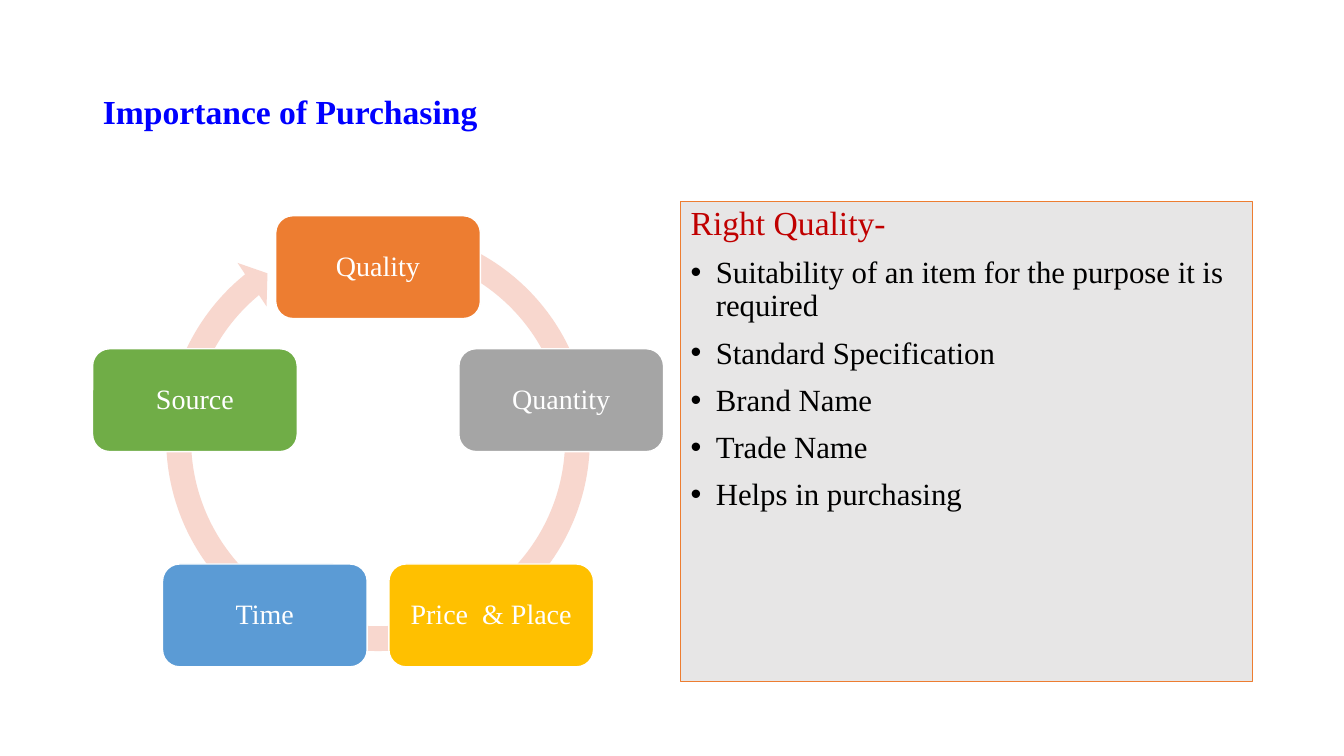
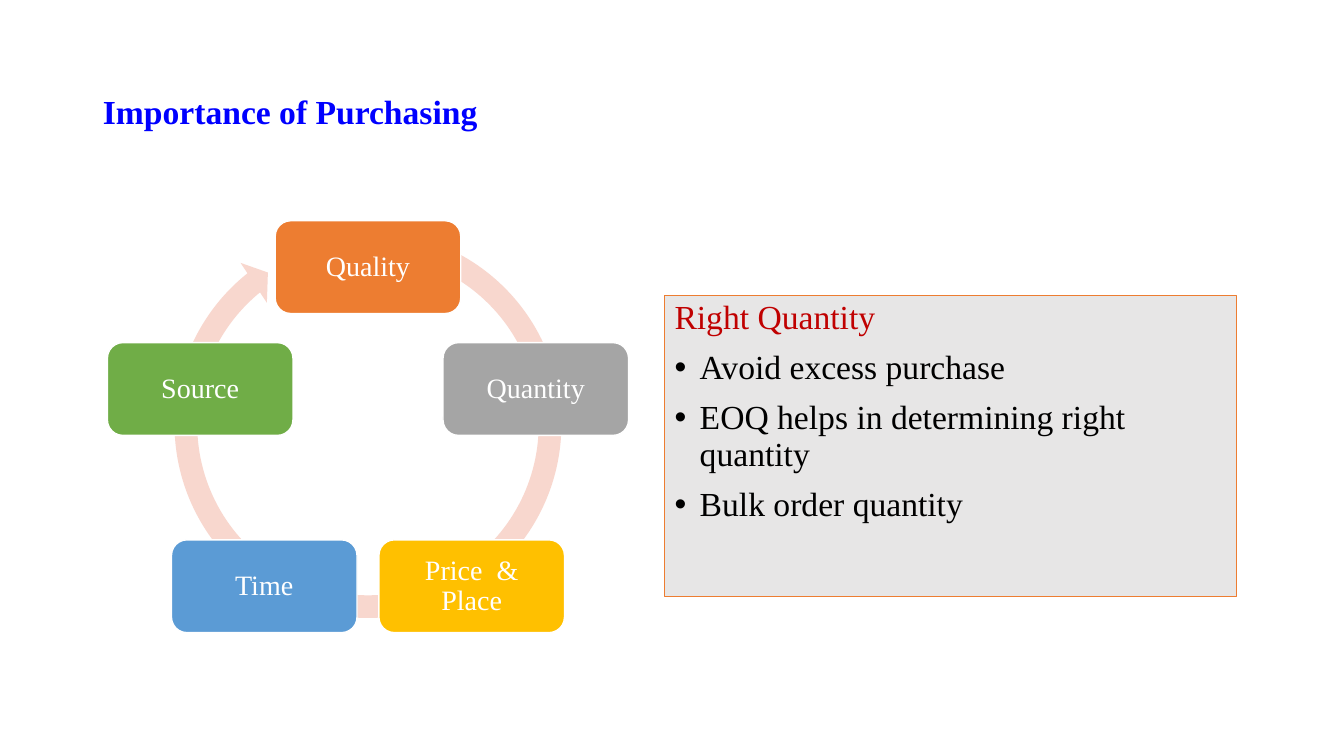
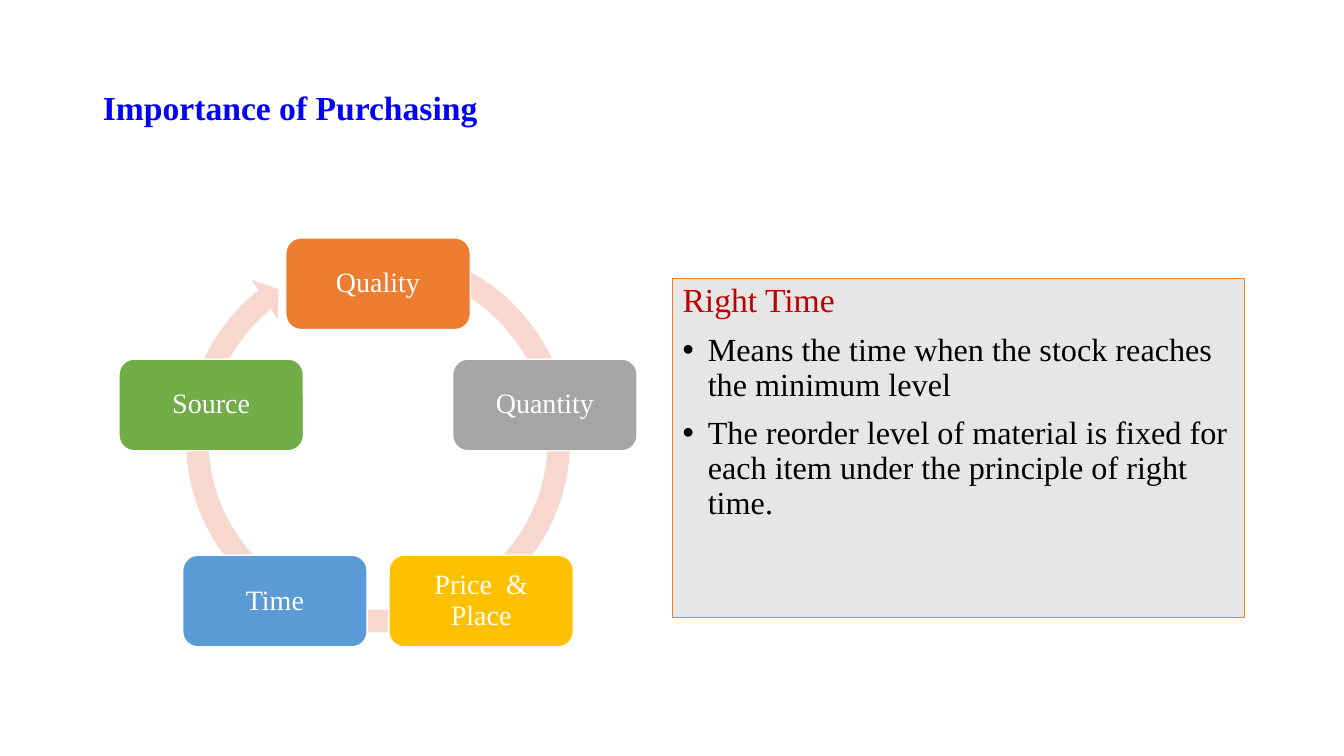
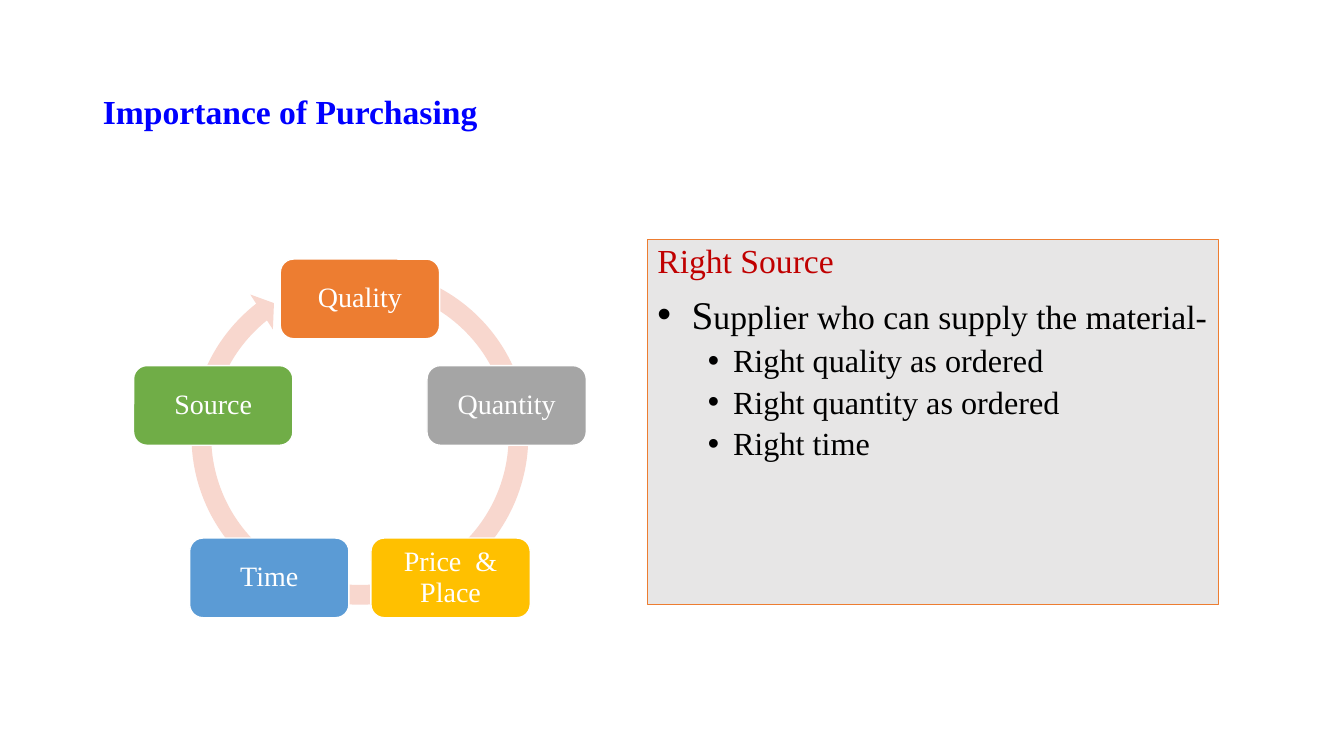
import math

import lxml.etree
import pptx
import pptx.dml.color
import pptx.enum.shapes
import pptx.enum.text
import pptx.oxml.ns
import pptx.util

Inches = pptx.util.Inches
Pt = pptx.util.Pt
SHAPE = pptx.enum.shapes.MSO_SHAPE
ALIGN = pptx.enum.text.PP_ALIGN
ANCHOR = pptx.enum.text.MSO_ANCHOR

FONT = "Times New Roman"
BLUE, RED, BLACK, WHITE = "0000FF", "C00000", "000000", "FFFFFF"
PANEL, ORANGE, RING = "E7E6E6", "ED7D31", "F8D7CE"
TITLE = "Importance of Purchasing"
TITLE_BOX = (0.92, 0.4, 11.5, 1.45)
PANEL_WIDTH = 5.67

# Clockwise from the top of the cycle
FACTORS = [
    ("Quality", ORANGE),
    ("Quantity", "A5A5A5"),
    ("Price  & Place", "FFC000"),
    ("Time", "5B9BD5"),
    ("Source", "70AD47"),
]


def points(size, *texts, level=0):
    """Bullets as (level, hanging indent, runs), all of one size."""
    return [(level, 0.25, [(text, size)]) for text in texts]


# cycle: centre x, top, box width, box height, radius
# arc: end and start of the ring, in hundredths of the adjustment unit
# panel: left, top, height
SLIDES = [
    {
        "cycle": (3.75, 2.14, 2.03, 1.02, 1.91),
        "arc": (13849, 17342),
        "panel": (6.75, 2, 4.76),
        "heading": "Right Quality-",
        "points": points(
            22,
            "Suitability of an item for the purpose it is required",
            "Standard Specification",
            "Brand Name",
            "Trade Name",
            "Helps in purchasing",
        ),
    },
    {
        "cycle": (3.65, 2.19, 1.84, 0.92, 1.75),
        "arc": (13869, 17329),
        "panel": (6.59, 2.93, 2.99),
        "heading": "Right Quantity",
        "points": points(
            24,
            "Avoid excess purchase",
            "EOQ helps in determining right quantity",
            "Bulk order quantity",
        ),
    },
    {
        "title_box": (0.92, 0.4, 5.67, 1.37),
        "cycle": (3.75, 2.36, 1.83, 0.91, 1.74),
        "arc": (13869, 17329),
        "panel": (6.67, 2.76, 3.37),
        "heading": "Right Time",
        "points": points(
            23,
            "Means the time when the stock reaches the minimum level",
            "The reorder level of material is fixed for each item under "
            "the principle of right time.",
        ),
    },
    {
        "cycle": (3.57, 2.57, 1.58, 0.79, 1.53),
        "arc": (13900, 17311),
        "panel": (6.42, 2.38, 3.62),
        "heading": "Right Source",
        "points": [
            (0, 0.34, [("S", 28), ("upplier who can supply the material-", 24)]),
            *points(
                23,
                "Right quality as ordered",
                "Right quantity as ordered",
                "Right time",
                level=1,
            ),
        ],
    },
]


def rgb(value):
    return pptx.dml.color.RGBColor.from_string(value)


def place(shape, *box):
    for name, value in zip(("left", "top", "width", "height"), box):
        setattr(shape, name, Inches(value))


def paint(shape, fill, line=None, width=1):
    shape.fill.solid()
    shape.fill.fore_color.rgb = rgb(fill)
    if line:
        shape.line.color.rgb = rgb(line)
        shape.line.width = Pt(width)
    else:
        shape.line.fill.background()


def add_run(p, text, size, color, bold=False):
    r = p.add_run()
    r.text = text
    style = {"name": FONT, "size": Pt(size), "bold": bold}
    for name, value in style.items():
        setattr(r.font, name, value)
    r.font.color.rgb = rgb(color)


def set_bullet(p, margin=0, hanging=0):
    """Give the paragraph a hanging round bullet, or none without a hanging indent."""
    pPr = p._p.get_or_add_pPr()
    pPr.set("marL", str(Inches(margin)))
    pPr.set("indent", str(-Inches(hanging)))
    tags = [("a:buFont", "typeface", "Arial"), ("a:buChar", "char", "•")]
    for tag, key, value in tags if hanging else [("a:buNone", None, None)]:
        el = lxml.etree.SubElement(pPr, pptx.oxml.ns.qn(tag))
        if key:
            el.set(key, value)


def fill_title(s, box):
    title = s.shapes.title
    place(title, *box)
    tf = title.text_frame
    tf.vertical_anchor = ANCHOR.MIDDLE
    p = tf.paragraphs[0]
    p.alignment, p.line_spacing = ALIGN.LEFT, 0.9
    add_run(p, TITLE, 24, BLUE, bold=True)


def fill_panel(s, left, top, height, heading, bullets):
    body = s.placeholders[1]
    place(body, left, top, PANEL_WIDTH, height)
    paint(body, PANEL, ORANGE, 0.75)
    tf = body.text_frame
    tf.auto_size = pptx.enum.text.MSO_AUTO_SIZE.NONE
    p = tf.paragraphs[0]
    p.line_spacing, p.space_before = 0.9, Pt(10)
    set_bullet(p)
    add_run(p, heading, 24, RED)
    for level, hanging, runs in bullets:
        p = tf.add_paragraph()
        p.level = level
        p.line_spacing, p.space_before = 0.9, Pt(5 if level else 10)
        set_bullet(p, hanging + level * 0.5, hanging)
        for text, size in runs:
            add_run(p, text, size, BLACK)


def add_cycle(s, cx, top, width, height, radius, arc):
    """Draw the ring arrow with the factors spaced evenly around it."""
    group = s.shapes.add_group_shape()

    def add(kind, *box):
        shape = group.shapes.add_shape(kind, *map(Inches, box))
        shape.shadow.inherit = False
        return shape

    step = 2 * math.pi / len(FACTORS)
    size = radius * (1 + math.cos(step / 2)) + height
    ring = add(SHAPE.CIRCULAR_ARROW, cx - size / 2, top - 0.02, size, size)
    paint(ring, RING)
    for i, value in enumerate((5.5, 330.7, *arc, 5.8)):
        ring.adjustments[i] = value / 100

    for i, (name, color) in enumerate(FACTORS):
        x = cx + radius * math.sin(i * step) - width / 2
        y = top + radius * (1 - math.cos(i * step))
        box = add(SHAPE.ROUNDED_RECTANGLE, x, y, width, height)
        paint(box, color, WHITE)
        tf = box.text_frame
        tf.word_wrap = True
        tf.vertical_anchor = ANCHOR.MIDDLE
        for side in ("left", "top", "right", "bottom"):
            setattr(tf, f"margin_{side}", Inches(0.08))
        p = tf.paragraphs[0]
        p.alignment, p.line_spacing = ALIGN.CENTER, 0.9
        add_run(p, name, 20, WHITE)


def main():
    prs = pptx.Presentation()
    prs.slide_width, prs.slide_height = Inches(13.33), Inches(7.5)
    for data in SLIDES:
        s = prs.slides.add_slide(prs.slide_layouts[1])
        fill_title(s, data.get("title_box", TITLE_BOX))
        fill_panel(s, *data["panel"], data["heading"], data["points"])
        add_cycle(s, *data["cycle"], data["arc"])
    prs.save("out.pptx")


if __name__ == "__main__":
    main()
